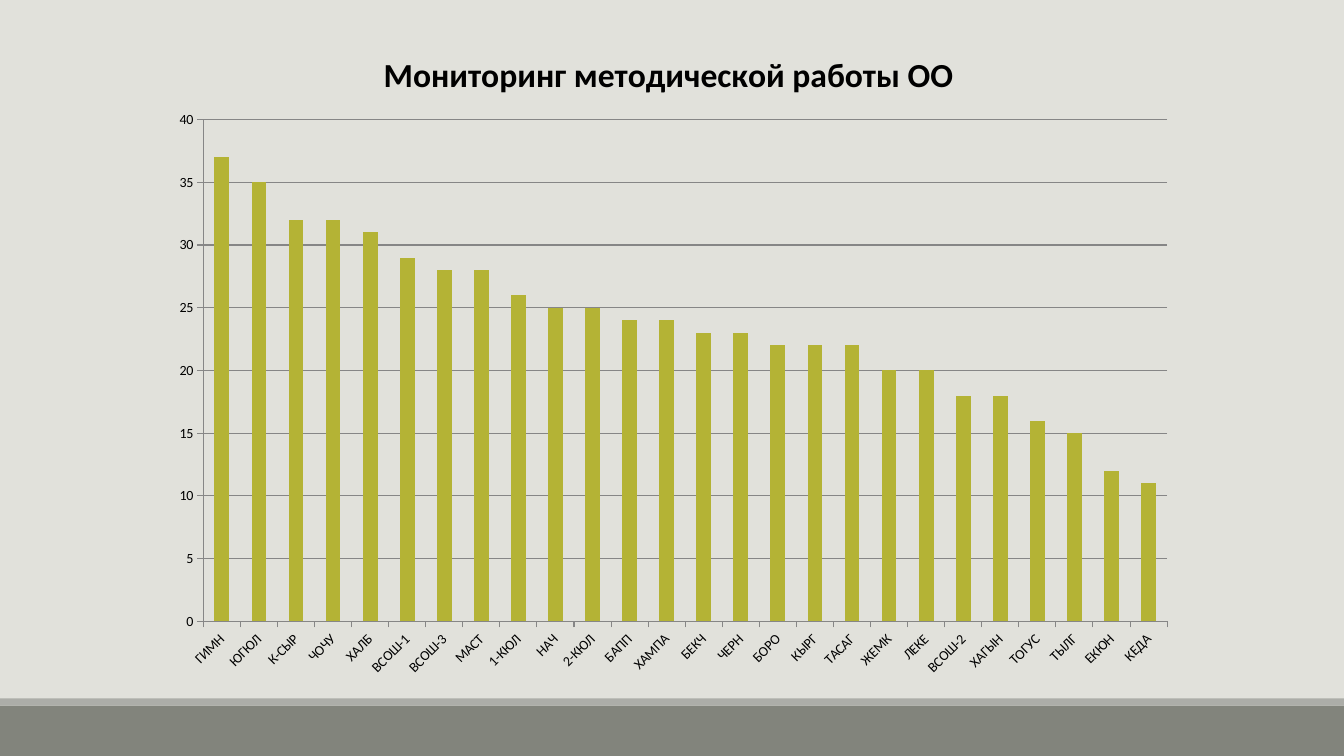
from lxml.etree import fromstring
from pptx import Presentation
from pptx.chart.data import CategoryChartData
from pptx.dml.color import RGBColor
from pptx.enum.chart import XL_CHART_TYPE, XL_TICK_MARK
from pptx.enum.shapes import MSO_SHAPE
from pptx.oxml.ns import nsdecls, qn
from pptx.util import Inches, Pt

TITLE = "Мониторинг методической работы ОО"
SCORES = {
    "ГИМН": 37, "ЮГЮЛ": 35, "К-СЫР": 32, "ЧОЧУ": 32, "ХАЛБ": 31,
    "ВСОШ-1": 29, "ВСОШ-3": 28, "МАСТ": 28, "1-КЮЛ": 26, "НАЧ": 25,
    "2-КЮЛ": 25, "БАПП": 24, "ХАМПА": 24, "БЕКЧ": 23, "ЧЕРН": 23,
    "БОРО": 22, "КЫРГ": 22, "ТАСАГ": 22, "ЖЕМК": 20, "ЛЕКЕ": 20,
    "ВСОШ-2": 18, "ХАГЫН": 18, "ТОГУС": 16, "ТЫЛГ": 15, "ЕКЮН": 12,
    "КЕДА": 11,
}

BACKGROUND = RGBColor(0xE1, 0xE1, 0xDB)
FOOTER = RGBColor(0x82, 0x84, 0x7C)
FOOTER_EDGE = RGBColor(0xAC, 0xAD, 0xA8)
OLIVE = RGBColor(0xB4, 0xB3, 0x35)
GRAY = RGBColor(0x86, 0x86, 0x86)
BLACK = RGBColor(0, 0, 0)

WIDTH, HEIGHT = 13.33, 7.5
FOOTER_BANDS = [(7, 0.5, FOOTER), (6.93, 0.07, FOOTER_EDGE)]
CHART_BOX = (1.61, 0.19, 10.17, 6.64)
PLOT_LAYOUT = {"x": 0.04, "y": 0.15, "w": 0.94, "h": 0.75}
TITLE_LAYOUT = {"x": 0.21, "y": 0.04}
LABEL_ANGLE = -45
LABEL_FONT = {"name": "Calibri", "size": Pt(10), "bold": False}
TITLE_FONT = {"name": "Calibri", "size": Pt(24), "bold": True}
VALUE_SCALE = {"minimum_scale": 0, "maximum_scale": 40, "major_unit": 5}
TICKS = {"major_tick_mark": XL_TICK_MARK.OUTSIDE,
         "minor_tick_mark": XL_TICK_MARK.NONE}


def apply(target, values):
    for name, value in values.items():
        setattr(target, name, value)


def style_font(font, values):
    apply(font, values)
    font.color.rgb = BLACK


def style_line(line):
    line.color.rgb = GRAY
    line.width = Pt(0.75)


def place(part, index, layout, inner=False):
    for old in part.findall(qn("c:layout")):
        part.remove(old)
    target = '<c:layoutTarget val="inner"/>' if inner else ""
    modes = "".join(f'<c:{key}Mode val="edge"/>' for key in ("x", "y"))
    sizes = "".join(f'<c:{key} val="{value}"/>' for key, value in layout.items())
    part.insert(index, fromstring(
        f'<c:layout {nsdecls("c")}><c:manualLayout>{target}{modes}{sizes}'
        '</c:manualLayout></c:layout>'))


def add_footer(slide):
    for top, height, color in FOOTER_BANDS:
        band = slide.shapes.add_shape(
            MSO_SHAPE.RECTANGLE, 0, Inches(top), Inches(WIDTH), Inches(height))
        band.shadow.inherit = False
        band.fill.solid()
        band.fill.fore_color.rgb = color
        band.line.fill.background()


def add_scores(slide):
    scores = CategoryChartData()
    scores.categories = list(SCORES)
    scores.add_series("Series 1", list(SCORES.values()))
    chart = slide.shapes.add_chart(
        XL_CHART_TYPE.COLUMN_CLUSTERED, *map(Inches, CHART_BOX), scores).chart
    chart.has_legend = False
    style_font(chart.font, LABEL_FONT)

    chart.has_title = True
    heading = chart.chart_title.text_frame
    heading.text = TITLE
    style_font(heading.paragraphs[0].runs[0].font, TITLE_FONT)
    place(chart.chart_title._element, 1, TITLE_LAYOUT)
    place(chart._chartSpace.chart.plotArea, 0, PLOT_LAYOUT, inner=True)

    columns = chart.plots[0]
    apply(columns, {"gap_width": 150, "vary_by_categories": False})
    fill = columns.series[0].format.fill
    fill.solid()
    fill.fore_color.rgb = OLIVE

    for axis in (chart.category_axis, chart.value_axis):
        apply(axis, TICKS)
        style_line(axis.format.line)
        style_font(axis.tick_labels.font, LABEL_FONT)
    apply(chart.value_axis, VALUE_SCALE)
    chart.value_axis.has_major_gridlines = True
    style_line(chart.value_axis.major_gridlines.format.line)
    label_body = chart.category_axis._element.find(
        qn("c:txPr")).find(qn("a:bodyPr"))
    label_body.set("rot", str(LABEL_ANGLE * 60000))
    label_body.set("vert", "horz")


def main():
    deck = Presentation()
    deck.slide_width, deck.slide_height = Inches(WIDTH), Inches(HEIGHT)
    slide = deck.slides.add_slide(deck.slide_layouts[6])
    slide.background.fill.solid()
    slide.background.fill.fore_color.rgb = BACKGROUND
    add_footer(slide)
    add_scores(slide)
    deck.save("out.pptx")


if __name__ == "__main__":
    main()
